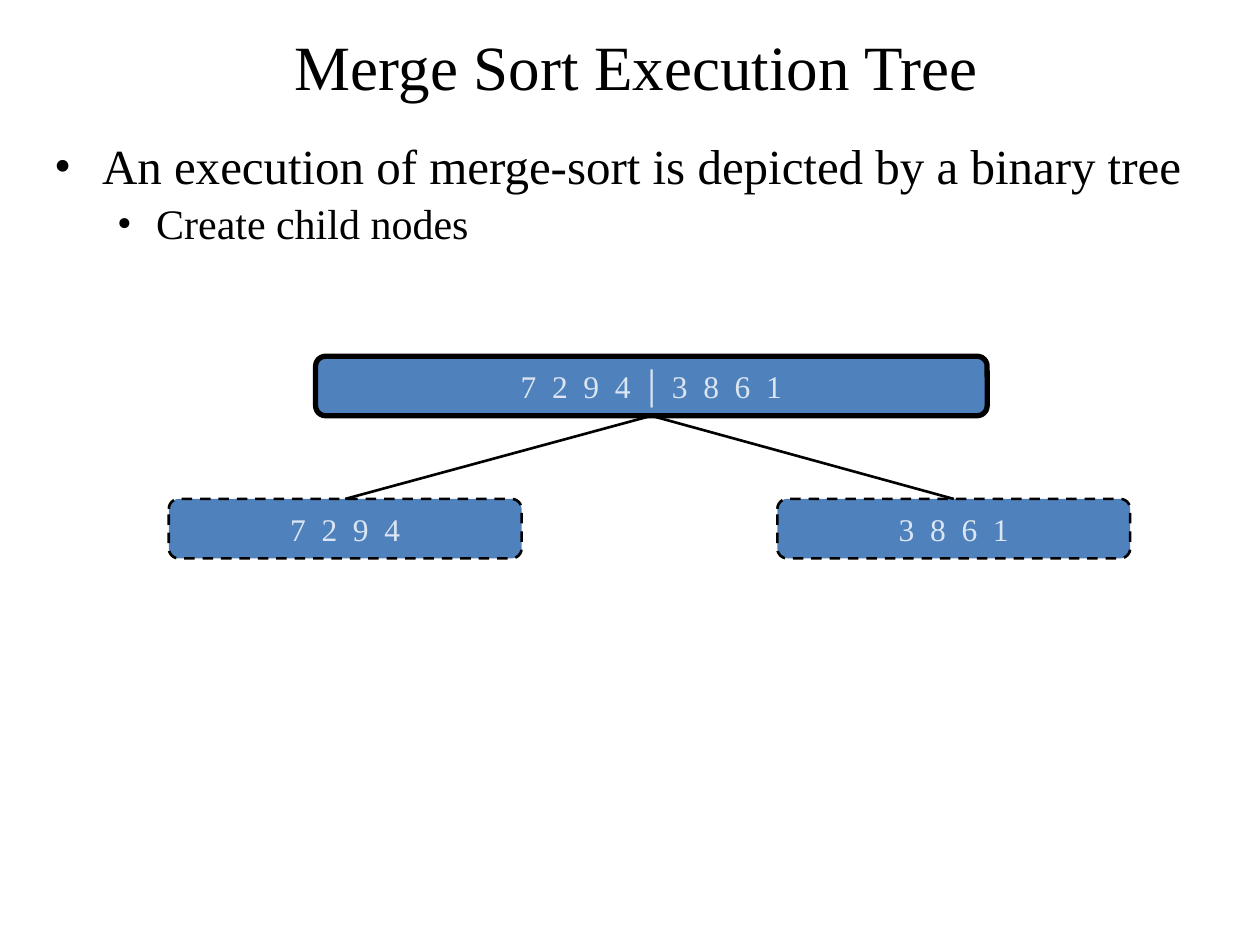
from dataclasses import dataclass

from lxml import etree
from pptx import Presentation
from pptx import util as u
from pptx.dml.color import RGBColor
from pptx.enum import dml, shapes, text
from pptx.oxml.ns import qn


@dataclass(frozen=True)
class Theme:
    font: str = "Times New Roman"
    divider_font: str = "Arial"
    ink: str = "000000"
    node_fill: str = "4F81BD"
    node_ink: str = "DCE6F2"
    title_size: int = 36
    list_sizes: tuple = (28, 24)
    node_size: int = 18
    digit_spacing: float = 2.25
    thin: float = 1.5
    thick: float = 3


@dataclass(frozen=True)
class Node:
    """A tree node; centre, top and width are shares of the slide's size."""
    halves: tuple
    centre: float
    top: float
    width: float
    pending: bool = False


THEME = Theme()
WIDTH, HEIGHT = u.Inches(10), u.Inches(7.5)
NODE_HEIGHT = 0.063
BULLETS = (
    ("An execution of merge-sort is depicted by a binary tree", 0.38, 0.38),
    ("Create child nodes", 0.81, 0.31),
)
ROOT = Node(("7 2 9 4", "3 8 6 1"), 0.517, 0.377, 0.533)
CHILDREN = [
    Node((half,), centre, 0.528, 0.28, pending=True)
    for half, centre in zip(ROOT.halves, (0.274, 0.757))
]


def place(shape, left: float, top: float, width: float, height: float) -> None:
    """Position a shape by shares of the slide's size."""
    shape.left, shape.width = round(left * WIDTH), round(width * WIDTH)
    shape.top, shape.height = round(top * HEIGHT), round(height * HEIGHT)


def write(paragraph, words: str, *, size: float, color: str = THEME.ink,
          font: str = THEME.font, bold: bool = False, spacing: float = 0) -> None:
    run = paragraph.add_run()
    run.text = words
    run.font.size, run.font.name, run.font.bold = u.Pt(size), font, bold
    run.font.color.rgb = RGBColor.from_string(color)
    if spacing:
        run.font._element.set("spc", str(round(spacing * 100)))


def set_bullet(paragraph, margin: float, hanging: float) -> None:
    properties = paragraph._p.get_or_add_pPr()
    properties.set("marL", str(u.Inches(margin)))
    properties.set("indent", str(-u.Inches(hanging)))
    etree.SubElement(properties, qn("a:buFont")).set("typeface", THEME.font)
    etree.SubElement(properties, qn("a:buChar")).set("char", "•")


def fill_title(title) -> None:
    place(title, 0.055, 0.023, 0.9, 0.093)
    title.text_frame.vertical_anchor = text.MSO_ANCHOR.MIDDLE
    title.text_frame.auto_size = text.MSO_AUTO_SIZE.NONE
    heading = title.text_frame.paragraphs[0]
    heading.alignment = text.PP_ALIGN.CENTER
    write(heading, "Merge Sort Execution Tree", size=THEME.title_size)


def fill_body(body) -> None:
    place(body, 0.033, 0.144, 0.933, 0.189)
    frame = body.text_frame
    frame.auto_size = text.MSO_AUTO_SIZE.NONE
    for level, (words, margin, hanging) in enumerate(BULLETS):
        item = frame.add_paragraph() if level else frame.paragraphs[0]
        size = THEME.list_sizes[level]
        item.level, item.line_spacing = level, 0.9
        item.space_before = u.Pt(0.2 * size)
        set_bullet(item, margin, hanging)
        write(item, words, size=size)


def draw_node(slide, node: Node):
    box = slide.shapes.add_shape(shapes.MSO_SHAPE.ROUNDED_RECTANGLE, 0, 0, 0, 0)
    place(box, node.centre - node.width / 2, node.top, node.width, NODE_HEIGHT)
    box.shadow.inherit = False
    box.fill.solid()
    box.fill.fore_color.rgb = RGBColor.from_string(THEME.node_fill)
    box.line.color.rgb = RGBColor.from_string(THEME.ink)
    box.line.width = u.Pt(THEME.thin if node.pending else THEME.thick)
    if node.pending:
        box.line.dash_style = dml.MSO_LINE.DASH
    box.text_frame.word_wrap = False
    box.text_frame.vertical_anchor = text.MSO_ANCHOR.MIDDLE
    values = box.text_frame.paragraphs[0]
    values.alignment = text.PP_ALIGN.CENTER
    style = dict(size=THEME.node_size, color=THEME.node_ink)
    for index, half in enumerate(node.halves):
        if index:
            write(values, " │ ", font=THEME.divider_font, bold=True, **style)
        write(values, half, spacing=THEME.digit_spacing, **style)
    return box


def draw_branch(slide, parent, child) -> None:
    """Join the top of the child to the bottom of its parent."""
    branch = slide.shapes.add_connector(shapes.MSO_CONNECTOR.STRAIGHT, 0, 0, 0, 0)
    branch.begin_connect(child, 0)
    branch.end_connect(parent, 2)
    branch.line.color.rgb = RGBColor.from_string(THEME.ink)
    branch.line.width = u.Pt(THEME.thin)
    etree.SubElement(branch._element.spPr, qn("a:effectLst"))


def main() -> None:
    deck = Presentation()
    deck.slide_width, deck.slide_height = WIDTH, HEIGHT
    slide = deck.slides.add_slide(deck.slide_layouts[1])
    fill_title(slide.shapes.title)
    fill_body(slide.placeholders[1])
    child_boxes = [draw_node(slide, child) for child in CHILDREN]
    root_box = draw_node(slide, ROOT)
    for child_box in child_boxes:
        draw_branch(slide, root_box, child_box)
    deck.save("out.pptx")


if __name__ == "__main__":
    main()
